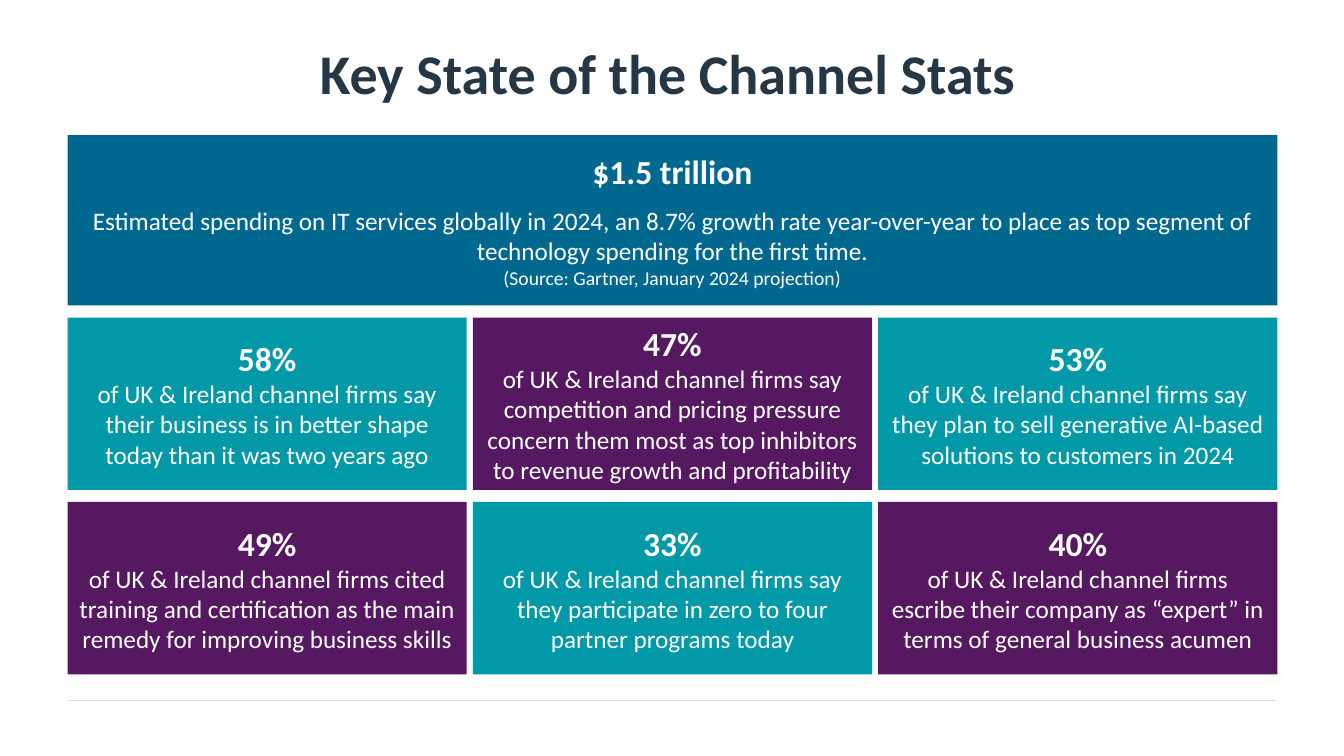
from pptx import Presentation
from pptx.dml.color import RGBColor
from pptx.enum.shapes import MSO_CONNECTOR, MSO_SHAPE
from pptx.enum.text import MSO_ANCHOR, PP_ALIGN
from pptx.oxml.ns import qn
from pptx.util import Inches, Pt
from lxml import etree

RECT = MSO_SHAPE.RECTANGLE
STRAIGHT = MSO_CONNECTOR.STRAIGHT
MIDDLE = MSO_ANCHOR.MIDDLE
CENTER = PP_ALIGN.CENTER

WHITE = RGBColor(0xFE, 0xFF, 0xFE)
NAVY = RGBColor(0x25, 0x36, 0x44)
BLUE = RGBColor(0x00, 0x68, 0x8E)
TEAL = RGBColor(0x01, 0x98, 0xA7)
PLUM = RGBColor(0x56, 0x18, 0x61)
GREY = RGBColor(0xDA, 0xDF, 0xE1)

FONT = "Calibri"
LEFT, WIDTH = 0.67, 12
COLS = 3
GAP_X, GAP_Y = 0.06, 0.12
TILE_W = (WIDTH - GAP_X * (COLS - 1)) / COLS
TILE_H = 1.71

STATS = [
    ("58%", "of UK & Ireland channel firms say their business is in better "
            "shape today than it was two years ago"),
    ("47%", "of UK & Ireland channel firms say competition and pricing pressure "
            "concern them most as top inhibitors to revenue growth and profitability"),
    ("53%", "of UK & Ireland channel firms say they plan to sell generative "
            "AI-based solutions to customers in 2024"),
    ("49%", "of UK & Ireland channel firms cited training and certification "
            "as the main remedy for improving business skills"),
    ("33%", "of UK & Ireland channel firms say they participate in zero to "
            "four partner programs today"),
    ("40%", "of UK & Ireland channel firms escribe their company as “expert” "
            "in terms of general business acumen"),
]


def add_text(frame, lines, color):
    """Write one centred paragraph for each (text, size, bold, space after)."""
    frame.word_wrap = True
    frame.vertical_anchor = MIDDLE
    for i, (text, size, bold, after) in enumerate(lines):
        para = frame.paragraphs[0] if i == 0 else frame.add_paragraph()
        para.alignment = CENTER
        para.space_after = Pt(after)
        run = para.add_run()
        run.text = text
        run.font.name = FONT
        run.font.size = Pt(size)
        run.font.bold = bold
        run.font.color.rgb = color


def add_title(slide, x, y, w, h):
    box = slide.shapes.add_textbox(Inches(x), Inches(y), Inches(w), Inches(h))
    box.text_frame.margin_left = 0
    add_text(box.text_frame, [("Key State of the Channel Stats", 40, True, 0)], NAVY)


def add_tile(slide, x, y, w, h, fill, lines):
    tile = slide.shapes.add_shape(RECT, Inches(x), Inches(y), Inches(w), Inches(h))
    tile.shadow.inherit = False
    tile.fill.solid()
    tile.fill.fore_color.rgb = fill
    tile.line.fill.background()
    add_text(tile.text_frame, lines, WHITE)


def add_banner(slide, x, y, w, h):
    add_tile(slide, x, y, w, h, BLUE, [
        ("$1.5 trillion", 24, True, 10),
        ("Estimated spending on IT services globally in 2024, an 8.7% growth rate "
         "year-over-year to place as top segment of technology spending for the "
         "first time.", 18, False, 0),
        ("(Source: Gartner, January 2024 projection)", 14, False, 0),
    ])


def add_grid(slide, x, y):
    # Colours alternate from tile to tile, like a chessboard
    for i, (value, note) in enumerate(STATS):
        row, col = divmod(i, COLS)
        add_tile(slide, x + col * (TILE_W + GAP_X), y + row * (TILE_H + GAP_Y),
                 TILE_W, TILE_H, PLUM if i % 2 else TEAL,
                 [(value, 24, True, 0), (note, 18, False, 0)])


def add_rule(slide, x, y, w):
    rule = slide.shapes.add_connector(
        STRAIGHT, Inches(x), Inches(y), Inches(x + w), Inches(y))
    rule.line.color.rgb = GREY
    rule.line.width = Pt(0.5)
    etree.SubElement(rule._element.spPr, qn("a:effectLst"))


def main():
    deck = Presentation()
    deck.slide_width, deck.slide_height = Inches(13.33), Inches(7.5)
    slide = deck.slides.add_slide(deck.slide_layouts[6])
    slide.background.fill.solid()
    slide.background.fill.fore_color.rgb = WHITE

    # Footer rule, heading, headline figure, then the six stats
    add_rule(slide, LEFT, 6.95, WIDTH)
    add_title(slide, LEFT, 0.09, WIDTH, 1.25)
    add_banner(slide, LEFT, 1.34, WIDTH, 1.69)
    add_grid(slide, LEFT, 3.15)
    deck.save("out.pptx")


if __name__ == "__main__":
    main()
